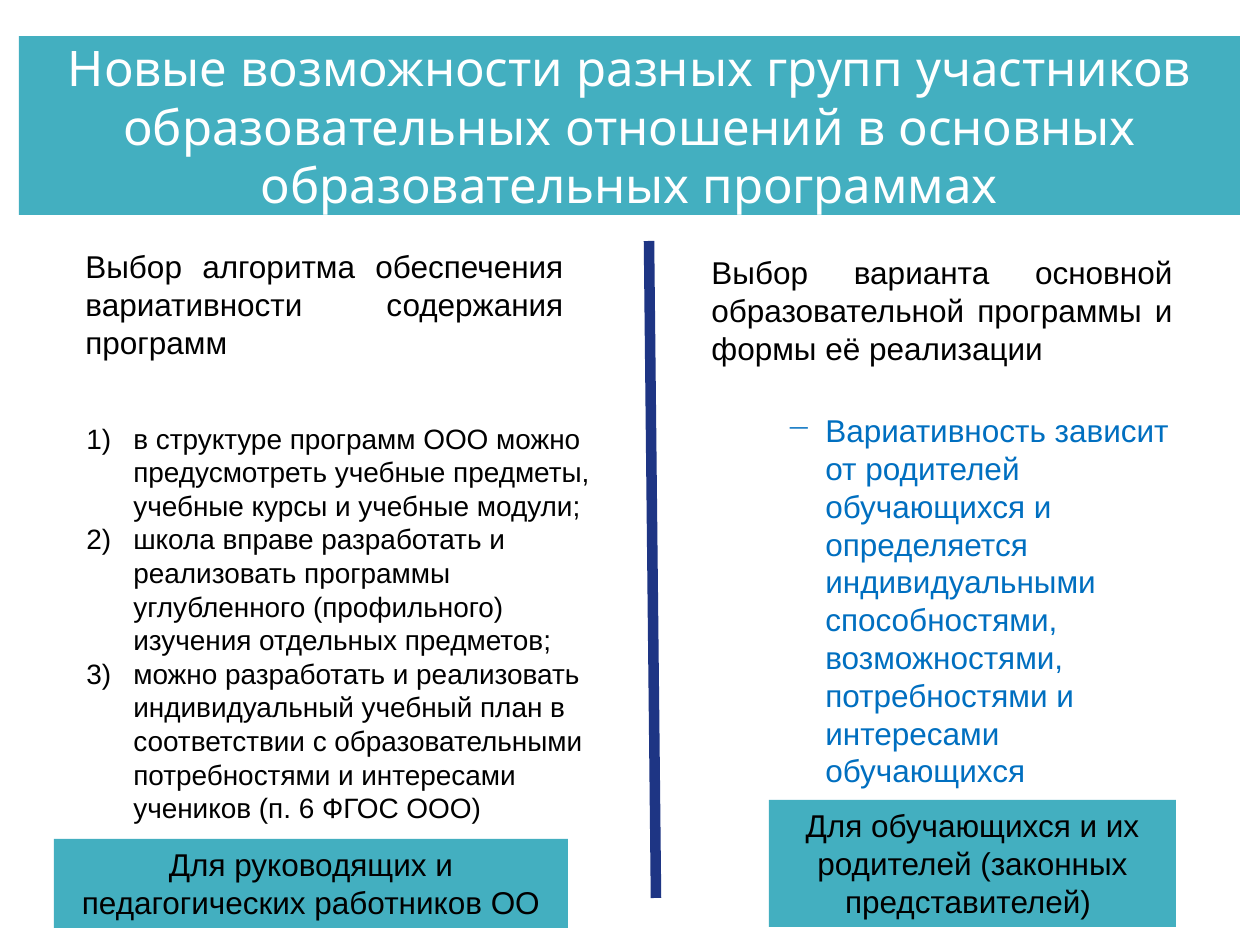
"""Build the slide on new opportunities for participants in education."""
from dataclasses import dataclass
from typing import Any

import lxml.etree
import pptx
import pptx.dml.color
import pptx.enum.shapes
import pptx.enum.text
import pptx.oxml.ns
import pptx.util

EMU_PER_PX = 914400 / 126
COLORS = {"teal": "43AFC0", "navy": "1E3584", "blue": "006FC0",
          "black": "000000", "white": "FFFFFF"}
ALIGN = pptx.enum.text.PP_ALIGN
ANCHOR = pptx.enum.text.MSO_ANCHOR


@dataclass(frozen=True)
class Box:
    left: int
    top: int
    width: int
    height: int


@dataclass(frozen=True)
class Block:
    box: Box
    paragraphs: tuple[str, ...]
    style: dict[str, Any]
    fill: str | None = None


HEADING = {"align": ALIGN.JUSTIFY}
AUDIENCE = {"align": ALIGN.CENTER}
TITLE = ("Новые возможности разных групп участников образовательных "
         "отношений в основных образовательных программах")
BLOCKS = (
    Block(Box(774, 405, 441, 433),
          ("Вариативность зависит от родителей обучающихся и определяется "
           "индивидуальными способностями, возможностями, потребностями и "
           "интересами обучающихся",),
          {"color": "blue", "indent": 39, "bullet": ("buChar", {"char": "−"})}),
    Block(Box(73, 241, 503, 127),
          ("Выбор алгоритма обеспечения вариативности содержания программ",),
          HEADING),
    Block(Box(769, 800, 407, 127),
          ("Для обучающихся и их родителей (законных представителей) ",),
          AUDIENCE, "teal"),
    Block(Box(54, 839, 514, 89),
          ("Для руководящих и педагогических работников ОО",),
          AUDIENCE, "teal"),
    Block(Box(74, 415, 556, 458),
          ("в структуре программ ООО можно предусмотреть учебные предметы, "
           "учебные курсы и учебные модули;",
           "школа вправе разработать и реализовать программы углубленного "
           "(профильного) изучения отдельных предметов;",
           "можно разработать и реализовать индивидуальный учебный план в "
           "соответствии с образовательными потребностями и интересами "
           "учеников (п. 6 ФГОС ООО)"),
          {"size": 16, "indent": 47,
           "bullet": ("buAutoNum", {"type": "arabicParenR"})}),
    Block(Box(699, 247, 486, 127),
          ("Выбор варианта основной образовательной программы и формы её "
           "реализации",),
          HEADING),
)


def px(length: int) -> int:
    return round(length * EMU_PER_PX)


def rgb(name: str) -> pptx.dml.color.RGBColor:
    return pptx.dml.color.RGBColor.from_string(COLORS[name])


def write(frame: Any, *paragraphs: str, font: str = "Arial", size: int = 18,
          color: str = "black", align: Any = ALIGN.LEFT, anchor: Any = ANCHOR.TOP,
          indent: int = 0, bullet: tuple[str, dict[str, str]] | None = None) -> None:
    frame.word_wrap = True
    frame.auto_size = pptx.enum.text.MSO_AUTO_SIZE.NONE
    frame.vertical_anchor = anchor
    for index, text in enumerate(paragraphs):
        paragraph = frame.add_paragraph() if index else frame.paragraphs[0]
        paragraph.alignment = align
        run = paragraph.add_run()
        run.text = text
        run.font.name = font
        run.font.size = pptx.util.Pt(size)
        run.font.color.rgb = rgb(color)
        if bullet:
            tag, attributes = bullet
            properties = paragraph._p.get_or_add_pPr()
            properties.set("marL", str(px(indent)))
            properties.set("indent", str(-px(indent)))
            lxml.etree.SubElement(
                properties, pptx.oxml.ns.qn(f"a:{tag}"), attributes)


def fill_solid(shape: Any, color: str) -> None:
    shape.fill.solid()
    shape.fill.fore_color.rgb = rgb(color)


def add_title(slide: Any, box: Box) -> None:
    title = slide.shapes.title
    title.left, title.top = px(box.left), px(box.top)
    title.width, title.height = px(box.width), px(box.height)
    fill_solid(title, "teal")
    write(title.text_frame, TITLE, font="Quicksand", size=28, color="white",
          align=ALIGN.CENTER, anchor=ANCHOR.MIDDLE)


def add_block(slide: Any, block: Block) -> None:
    box = block.box
    place = px(box.left), px(box.top), px(box.width), px(box.height)
    if block.fill:
        shape = slide.shapes.add_shape(
            pptx.enum.shapes.MSO_SHAPE.RECTANGLE, *place)
        shape.shadow.inherit = False
        shape.line.fill.background()
        fill_solid(shape, block.fill)
    else:
        shape = slide.shapes.add_textbox(*place)
    write(shape.text_frame, *block.paragraphs, **block.style)


def add_divider(slide: Any, start: tuple[int, int], end: tuple[int, int]) -> None:
    divider = slide.shapes.add_connector(
        pptx.enum.shapes.MSO_CONNECTOR.STRAIGHT, *map(px, start + end))
    divider.line.color.rgb = rgb("navy")
    divider.line.width = pptx.util.Pt(6)
    lxml.etree.SubElement(
        divider._element.spPr, pptx.oxml.ns.qn("a:effectLst"))


def main() -> None:
    presentation = pptx.Presentation()
    presentation.slide_width = px(1260)
    presentation.slide_height = px(945)
    slide = presentation.slides.add_slide(
        presentation.slide_layouts.get_by_name("Title Only"))
    add_title(slide, Box(19, 36, 1221, 179))
    for block in BLOCKS:
        add_block(slide, block)
    add_divider(slide, (649, 241), (656, 898))
    presentation.save("out.pptx")


if __name__ == "__main__":
    main()
